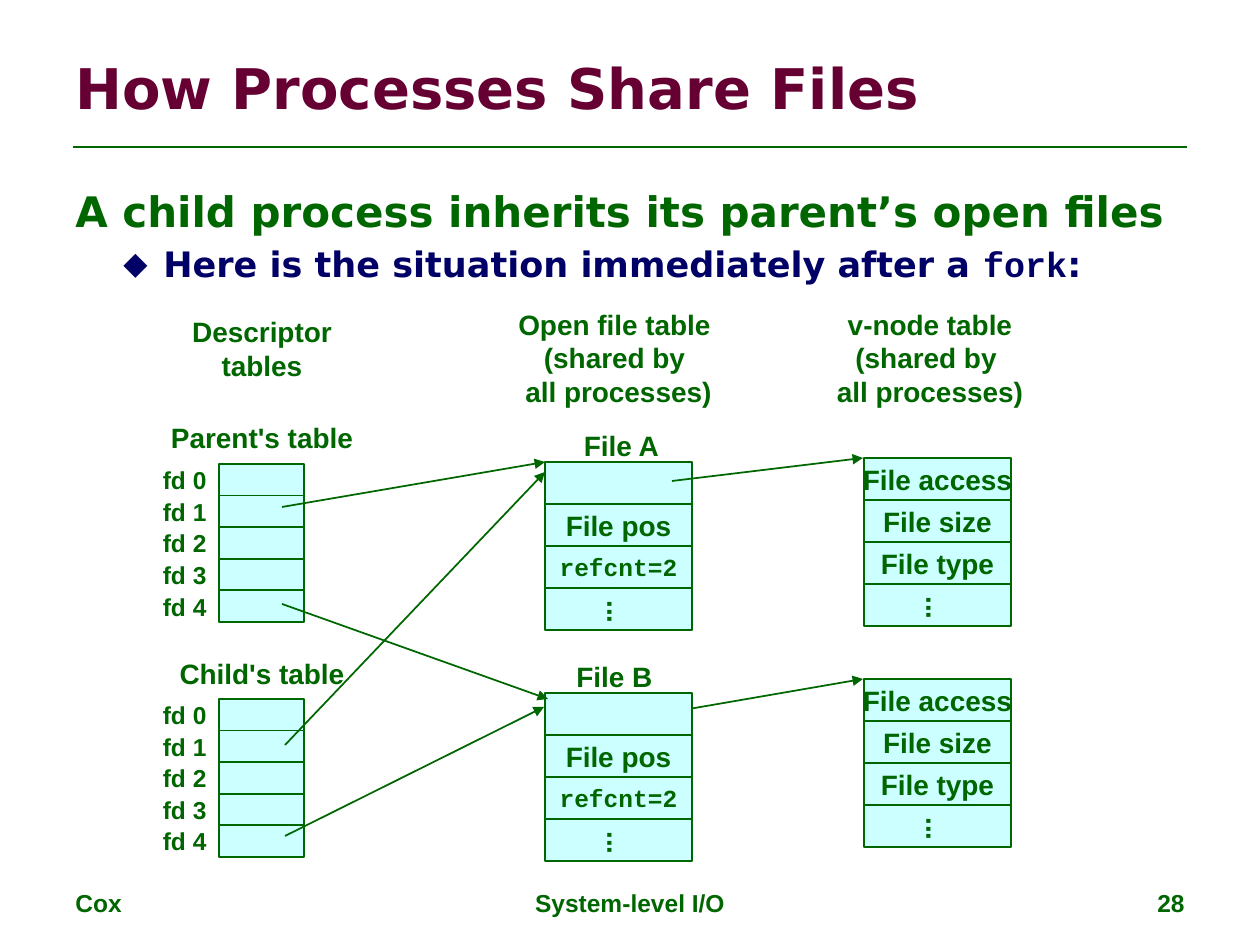
from dataclasses import dataclass

from lxml import etree
from pptx import Presentation
from pptx.dml.color import RGBColor
from pptx.enum.shapes import MSO_CONNECTOR, MSO_SHAPE
from pptx.enum.text import MSO_ANCHOR, PP_ALIGN
from pptx.oxml.ns import qn
from pptx.util import Emu, Pt

LEFT, CENTER, RIGHT = PP_ALIGN.LEFT, PP_ALIGN.CENTER, PP_ALIGN.RIGHT
TOP, MIDDLE = MSO_ANCHOR.TOP, MSO_ANCHOR.MIDDLE
RECTANGLE, STRAIGHT = MSO_SHAPE.RECTANGLE, MSO_CONNECTOR.STRAIGHT
EMU_PER_PX = 914400 / 126
DOTS = "..."


@dataclass(frozen=True)
class Theme:
    """Colours, fonts and type sizes of the slide."""
    green: RGBColor = RGBColor(0x00, 0x66, 0x00)
    maroon: RGBColor = RGBColor(0x66, 0x00, 0x33)
    navy: RGBColor = RGBColor(0x00, 0x00, 0x66)
    cell: RGBColor = RGBColor(0xCC, 0xFF, 0xFF)
    display: str = "DejaVu Sans"
    sans: str = "Arial"
    mono: str = "Courier New"
    title: int = 32
    lead: int = 24
    point: int = 20
    label: int = 16
    small: int = 14
    rule: float = 1.5
    thin: float = 1


THEME = Theme()


def px(*lengths):
    """Turn pixel lengths into EMU."""
    return [Emu(round(length * EMU_PER_PX)) for length in lengths]


def assign(target, values):
    """Set every attribute named in values."""
    for name, value in values.items():
        setattr(target, name, value)


def add_run(paragraph, text, size, color=THEME.green, font=THEME.sans):
    """Append one bold run."""
    run = paragraph.add_run()
    run.text = text
    assign(run.font, {"size": Pt(size), "name": font, "bold": True})
    run.font.color.rgb = color


def fill_frame(frame, text, size, align=CENTER, anchor=MIDDLE, wrap=False, **font):
    """Write each line of text as a paragraph of the frame."""
    assign(frame, {"word_wrap": wrap, "vertical_anchor": anchor})
    for number, line in enumerate(text.split("\n")):
        paragraph = frame.add_paragraph() if number else frame.paragraphs[0]
        paragraph.alignment = align
        add_run(paragraph, line, size, **font)


def add_label(slide, box, text, size=THEME.label, **style):
    """Place a text box."""
    fill_frame(slide.shapes.add_textbox(*px(*box)).text_frame, text, size, **style)


def add_line(slide, start, end, width=THEME.thin, arrow=True):
    """Draw a straight line, with an arrowhead at its end if asked."""
    line = slide.shapes.add_connector(STRAIGHT, *px(*start, *end))
    line.line.color.rgb = THEME.green
    line.line.width = Pt(width)
    if arrow:
        etree.SubElement(line.line._get_or_add_ln(), qn("a:tailEnd"), type="triangle")
    etree.SubElement(line._element.spPr, qn("a:effectLst"))


def add_cell(slide, box, text):
    """Draw one table cell, with its text if it has any."""
    cell = slide.shapes.add_shape(RECTANGLE, *px(*box))
    cell.shadow.inherit = False
    cell.fill.solid()
    cell.fill.fore_color.rgb = THEME.cell
    cell.line.color.rgb = THEME.green
    cell.line.width = Pt(THEME.thin)
    if text:
        is_code = "=" in text
        fill_frame(cell.text_frame, text, THEME.small if is_code else THEME.label,
                   font=THEME.mono if is_code else THEME.sans)
    if text == DOTS:
        cell.text_frame._txBody.bodyPr.set("vert", "eaVert")


def add_stack(slide, box, rows):
    """Split the box into equal cells, one for each row."""
    left, top, width, height = box
    step = height / len(rows)
    for number, text in enumerate(rows):
        add_cell(slide, (left, top + number * step, width, step), text)


def add_descriptor_table(slide, box, name, name_top):
    """Draw a process's descriptor table with its name and row labels."""
    left, top, width, height = box
    rows = 5
    step = height / rows
    add_label(slide, (left - 61, top + name_top, width + 123, 47), name)
    add_stack(slide, box, [""] * rows)
    for number in range(rows):
        add_label(slide, (left - 84, top + number * step, 84, step), f"fd {number}",
                  THEME.small, align=RIGHT)


def add_open_file(slide, box, name, name_left):
    """Draw an open file entry under its name."""
    left, top, width, _ = box
    add_stack(slide, box, ["", "File pos", "refcnt=2", DOTS])
    add_label(slide, (left + name_left, top - 40, width - 46, 47), name)


def add_v_node(slide, box):
    """Draw a v-node entry."""
    add_stack(slide, box, ["File access", "File size", "File type", DOTS])


def add_header(slide, box):
    """Place the title above its rule."""
    left, top, width, height = box
    add_label(slide, box, "How Processes Share Files", THEME.title, align=LEFT,
              wrap=True, color=THEME.maroon, font=THEME.display)
    rule_y = top + height + 11
    add_line(slide, (left + 10, rule_y), (left + width - 10, rule_y), THEME.rule, False)


def add_statement(slide, box):
    """Place the lead sentence and the bullet under it."""
    frame = slide.shapes.add_textbox(*px(*box)).text_frame
    frame.word_wrap = True
    lead, point = frame.paragraphs[0], frame.add_paragraph()
    add_run(lead, "A child process inherits its parent’s open files", THEME.lead,
            font=THEME.display)
    for text, font in (("Here is the situation immediately after a ", THEME.display),
                       ("fork", THEME.mono), (":", THEME.display)):
        add_run(point, text, THEME.point, THEME.navy, font)
    for paragraph, margin, hang in ((lead, 24, 24), (point, 88, 40)):
        properties = paragraph._p.get_or_add_pPr()
        for name, length in zip(("marL", "indent"), px(margin, -hang)):
            properties.set(name, str(int(length)))
        spacing = etree.SubElement(properties, qn("a:spcBef"))
        etree.SubElement(spacing, qn("a:spcPct"), val="20000")
    bullet = point._p.get_or_add_pPr()
    etree.SubElement(bullet, qn("a:buSzPct"), val="90000")
    etree.SubElement(bullet, qn("a:buFont"), typeface=THEME.display)
    etree.SubElement(bullet, qn("a:buChar"), char="◆")


def add_diagram(slide, box):
    """Draw the three kinds of table and the arrows between them."""
    left, top, _, _ = box

    def at(x, y, *size):
        """Offset a place by the corner of the diagram."""
        return (left + x, top + y, *size)

    add_label(slide, at(8, 7, 236, 81), "Descriptor tables", wrap=True)
    shared = "(shared by \nall processes)"
    add_label(slide, at(369, 0, 227, 113), f"Open file table \n{shared}")
    add_label(slide, at(688, 0, 212, 113), f"v-node table\n{shared}")
    add_line(slide, at(524, 413), at(727, 378))
    for name, y, name_top in (("Parent's table", 163, -50), ("Child's table", 398, -49)):
        add_descriptor_table(slide, at(83, y, 85, 158), name, name_top)
    for name, y, name_left in (("File A", 161, 26), ("File B", 392, 19)):
        add_open_file(slide, at(409, y, 147, 168), name, name_left)
    for y in (157, 378):
        add_v_node(slide, at(728, y, 147, 168))
    for start, end in (((146, 206), (409, 161)), ((146, 303), (412, 398)),
                       ((149, 444), (409, 171)), ((149, 535), (408, 406)),
                       ((536, 180), (727, 157))):
        add_line(slide, at(*start), at(*end))


def add_footer(slide, box):
    """Place the author, the lecture and the page number."""
    left, top, width, height = box
    for text, align in (("Cox", LEFT), ("System-level I/O", CENTER), ("28", RIGHT)):
        part = 294 if align != CENTER else 400
        offset = {LEFT: 0, CENTER: (width - part) / 2, RIGHT: width - part}[align]
        add_label(slide, (left + offset, top, part, height), text, THEME.small,
                  align=align, anchor=TOP, wrap=True)


def main():
    """Build the slide and save it."""
    deck = Presentation()
    assign(deck, dict(zip(("slide_width", "slide_height"), px(1260, 945))))
    slide = deck.slides.add_slide(deck.slide_layouts[6])
    add_header(slide, (63, 38, 1134, 98))
    add_statement(slide, (63, 179, 1134, 665))
    add_diagram(slide, (136, 301, 897, 561))
    add_footer(slide, (63, 882, 1134, 44))
    deck.save("out.pptx")


if __name__ == "__main__":
    main()
